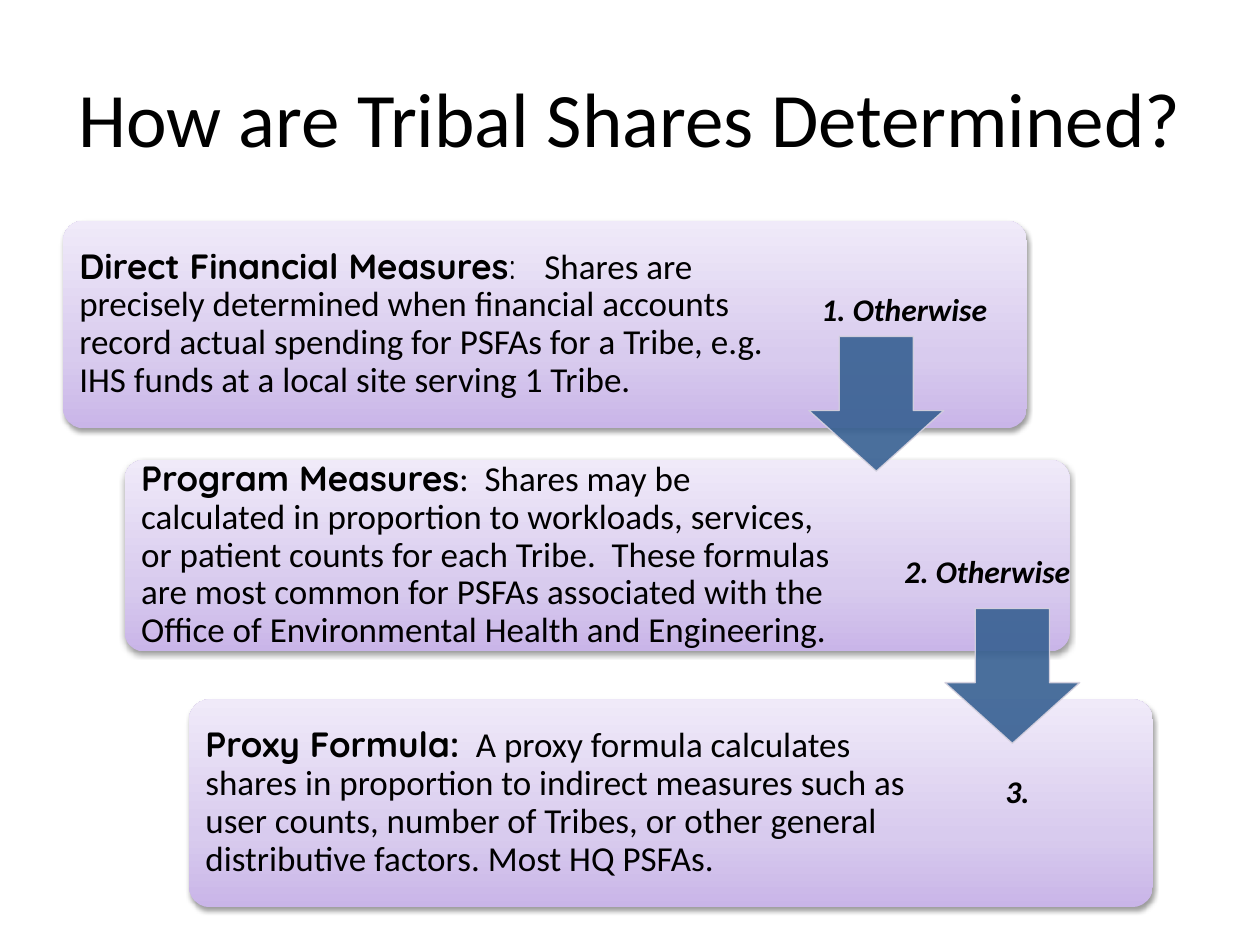
"""Build the slide on how tribal shares are determined."""
from dataclasses import dataclass

from pptx import Presentation
from pptx.dml.color import RGBColor
from pptx.enum.shapes import MSO_SHAPE as Shape
from pptx.enum.text import MSO_ANCHOR as Anchor, MSO_AUTO_SIZE as AutoSize, PP_ALIGN as Align
from pptx.oxml import parse_xml
from pptx.oxml.ns import nsdecls, qn
from pptx.util import Inches, Pt

BLACK, ARROW_BLUE, ARROW_EDGE = "000000", "376092", "D8D3E0"
CARD_STOPS = ((0, "C9B5E8"), (35, "D8CBEE"), (100, "F0EAF9"))
BODY, HEADING = "Calibri", "Quicksand"


@dataclass(frozen=True)
class Span:
    text: str
    font: str = BODY
    bold: bool = False
    size: int = 20


@dataclass(frozen=True)
class Card:
    left: float
    top: float
    width: float
    height: float
    text_width: float
    spans: tuple[Span, ...]


@dataclass(frozen=True)
class Label:
    left: float
    top: float
    width: float
    text: str


CARDS = (
    Card(0.5, 1.75, 7.65, 1.65, 5.87, (
        Span("Direct Financial Measures", HEADING, True),
        Span(":   ", HEADING),
        Span("Shares are precisely determined when financial accounts record actual "
             "spending for PSFAs for a Tribe, e.g. IHS funds at a local site serving 1 Tribe."),
    )),
    Card(0.99, 3.65, 7.5, 1.52, 5.7, (
        Span("Program Measures", HEADING, True),
        Span(":  Shares may be calculated in proportion to workloads, services, or patient "
             "counts for each Tribe.  These formulas are most common for PSFAs associated "
             "with the Office of Environmental Health and Engineering."),
    )),
    Card(1.5, 5.55, 7.65, 1.65, 5.81, (
        Span("Proxy Formula: ", HEADING, True),
        Span(" ", size=16),
        Span("A proxy formula calculates shares in proportion to indirect measures such as "
             "user counts, number of Tribes, or other general distributive factors. "
             "Most HQ PSFAs."),
    )),
)
ARROWS = ((6.42, 2.67), (7.5, 4.83))
LABELS = (
    Label(6.42, 2.25, 1.53, "1. Otherwise"),
    Label(7.08, 4.33, 1.53, "2. Otherwise"),
    Label(7.88, 6.08, 0.39, "3."),
)


def color(value: str) -> RGBColor:
    return RGBColor.from_string(value)


def style(run, size: int, font: str = BODY, bold: bool = False, italic: bool = False) -> None:
    run.font.size, run.font.name = Pt(size), font
    run.font.bold, run.font.italic = bold, italic
    run.font.color.rgb = color(BLACK)


def set_alpha(fill_element, percent: int) -> None:
    alpha = parse_xml(f'<a:alpha {nsdecls("a")} val="{percent * 1000}"/>')
    fill_element.find(qn("a:srgbClr")).append(alpha)


def add_title(page, text: str) -> None:
    title = page.shapes.title
    title.left, title.top = Inches(0), Inches(0.3)
    title.width, title.height = Inches(10), Inches(1.25)
    frame = title.text_frame
    frame.text = text
    frame.vertical_anchor = Anchor.MIDDLE
    frame.paragraphs[0].alignment = Align.CENTER
    style(frame.paragraphs[0].runs[0], 44)


def add_panel(page, card: Card) -> None:
    panel = page.shapes.add_shape(Shape.ROUNDED_RECTANGLE, Inches(card.left), Inches(card.top),
                                  Inches(card.width), Inches(card.height))
    panel.adjustments[0] = 0.1
    panel.fill.background()
    panel.line.fill.background()
    panel.shadow.inherit = False
    stops = "".join(f'<a:gs pos="{position * 1000}"><a:srgbClr val="{value}"/></a:gs>'
                    for position, value in CARD_STOPS)
    gradient = parse_xml(f'<a:gradFill {nsdecls("a")} rotWithShape="1"><a:gsLst>{stops}</a:gsLst>'
                         '<a:lin ang="16200000" scaled="0"/></a:gradFill>')
    shadow = parse_xml(f'<a:outerShdw {nsdecls("a")} blurRad="{Pt(3.1)}" dist="{Pt(1.6)}" '
                       'dir="5400000" rotWithShape="0"><a:srgbClr val="000000">'
                       '<a:alpha val="38000"/></a:srgbClr></a:outerShdw>')
    properties = panel.element.spPr
    properties.replace(properties.find(qn("a:noFill")), gradient)
    properties.find(qn("a:effectLst")).append(shadow)


def add_card(page, card: Card) -> None:
    add_panel(page, card)
    inset = 0.05
    box = page.shapes.add_textbox(Inches(card.left + inset), Inches(card.top + inset),
                                  Inches(card.text_width), Inches(card.height - 2 * inset))
    frame = box.text_frame
    frame.word_wrap = True
    frame.vertical_anchor = Anchor.MIDDLE
    frame.margin_left = frame.margin_right = Inches(0.08)
    frame.margin_top = frame.margin_bottom = Inches(0.08)
    para = frame.paragraphs[0]
    para.line_spacing = 0.9
    for span in card.spans:
        run = para.add_run()
        run.text = span.text
        style(run, span.size, span.font, span.bold)


def add_arrow(page, left: float, top: float) -> None:
    arrow = page.shapes.add_shape(Shape.DOWN_ARROW, Inches(left), Inches(top),
                                  Inches(1.07), Inches(1.07))
    arrow.adjustments[0], arrow.adjustments[1] = 0.55, 0.45
    arrow.shadow.inherit = False
    arrow.fill.solid()
    arrow.fill.fore_color.rgb = color(ARROW_BLUE)
    arrow.line.color.rgb = color(ARROW_EDGE)
    arrow.line.width = Pt(0.75)
    properties = arrow.element.spPr
    for parent in (properties, properties.find(qn("a:ln"))):
        set_alpha(parent.find(qn("a:solidFill")), 90)


def add_label(page, label: Label) -> None:
    box = page.shapes.add_textbox(Inches(label.left), Inches(label.top),
                                  Inches(label.width), Inches(0.4))
    frame = box.text_frame
    frame.word_wrap = False
    frame.auto_size = AutoSize.SHAPE_TO_FIT_TEXT
    frame.text = label.text
    style(frame.paragraphs[0].runs[0], 18, bold=True, italic=True)


def main() -> None:
    deck = Presentation()
    deck.slide_width, deck.slide_height = Inches(10), Inches(7.5)
    page = deck.slides.add_slide(deck.slide_layouts[5])
    add_title(page, "How are Tribal Shares Determined?")
    for card in CARDS:
        add_card(page, card)
    for left, top in ARROWS:
        add_arrow(page, left, top)
    for label in LABELS:
        add_label(page, label)
    deck.save("out.pptx")


if __name__ == "__main__":
    main()
